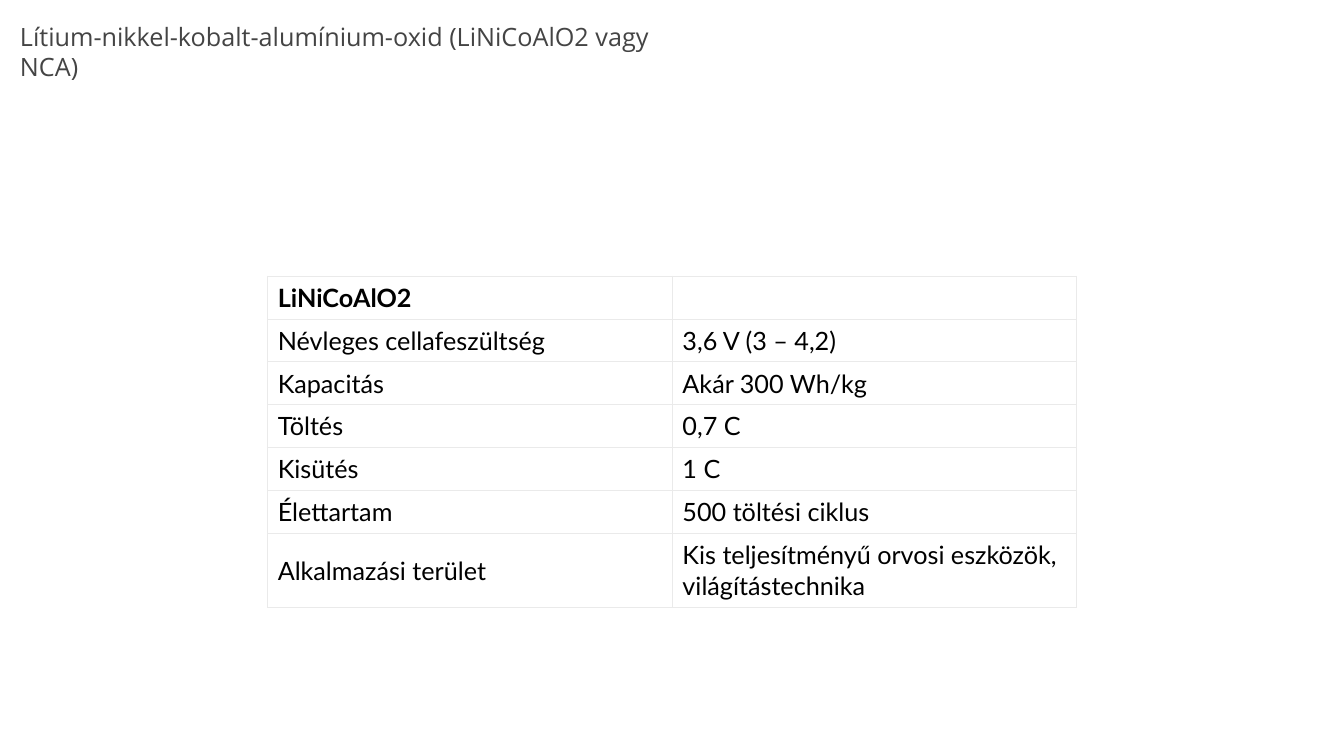
from dataclasses import dataclass

from lxml.etree import SubElement
from pptx import Presentation
from pptx.dml.color import RGBColor as Rgb
from pptx.enum.text import MSO_ANCHOR as Anchor, MSO_AUTO_SIZE as AutoSize, PP_ALIGN as Align
from pptx.oxml.ns import qn
from pptx.util import Cm, Pt

HEADING = "Lítium-nikkel-kobalt-alumínium-oxid (LiNiCoAlO2 vagy NCA)"
PROPERTIES = [
    ("LiNiCoAlO2", ""),
    ("Névleges cellafeszültség", "3,6 V (3 – 4,2)"),
    ("Kapacitás", "Akár 300 Wh/kg"),
    ("Töltés", "0,7 C"),
    ("Kisütés", "1 C"),
    ("Élettartam", "500 töltési ciklus"),
    ("Alkalmazási terület", "Kis teljesítményű orvosi eszközök, világítástechnika"),
]


@dataclass(frozen=True)
class Theme:
    heading_font: str = "Open Sans"
    table_font: str = "Lato"
    heading_color: str = "444444"
    table_color: str = "000000"
    cell_fill: str = "FFFFFF"
    border: str = "EAEAEA"
    text_size: float = 18
    border_width: float = 0.75


THEME = Theme()
COLUMN_WIDTH = Cm(10.2)
ROW_HEIGHT = Cm(1.08)
LAST_ROW_HEIGHT = Cm(1.86)


def format_font(font, name, color, bold=False):
    font.name = name
    font.size = Pt(THEME.text_size)
    font.bold = bold
    font.color.rgb = Rgb.from_string(color)


def add_borders(cell):
    """Draw all four sides; call before filling, as borders precede the fill in XML."""
    properties = cell._tc.get_or_add_tcPr()
    for side in ("a:lnL", "a:lnR", "a:lnT", "a:lnB"):
        line = SubElement(properties, qn(side), w=str(Pt(THEME.border_width)))
        fill = SubElement(line, qn("a:solidFill"))
        SubElement(fill, qn("a:srgbClr"), val=THEME.border)


def format_cell(cell, content, bold):
    add_borders(cell)
    cell.fill.solid()
    cell.fill.fore_color.rgb = Rgb.from_string(THEME.cell_fill)
    cell.vertical_anchor = Anchor.MIDDLE
    cell.margin_left = cell.margin_right = Cm(0.26)
    cell.margin_top = cell.margin_bottom = Cm(0.15)
    cell.text_frame.text = content
    for run in cell.text_frame.paragraphs[0].runs:
        format_font(run.font, THEME.table_font, THEME.table_color, bold)


def add_heading(slide):
    heading = slide.shapes.title
    heading.left, heading.top = Cm(0.25), Cm(0.41)
    heading.width, heading.height = Cm(16.94), Cm(1.8)
    frame = heading.text_frame
    frame.text = HEADING
    frame.word_wrap = True
    frame.auto_size = AutoSize.SHAPE_TO_FIT_TEXT
    frame.vertical_anchor = Anchor.TOP
    paragraph = frame.paragraphs[0]
    paragraph.alignment = Align.LEFT
    format_font(paragraph.runs[0].font, THEME.heading_font, THEME.heading_color)


def add_properties(slide):
    row_heights = [ROW_HEIGHT] * (len(PROPERTIES) - 1) + [LAST_ROW_HEIGHT]
    table = slide.shapes.add_table(
        len(PROPERTIES), 2, Cm(6.74), Cm(6.96), 2 * COLUMN_WIDTH, sum(row_heights)
    ).table
    table.first_row = table.horz_banding = False
    for column in table.columns:
        column.width = COLUMN_WIDTH
    for index, (row, height) in enumerate(zip(table.rows, row_heights)):
        row.height = height
        for cell, content in zip(row.cells, PROPERTIES[index]):
            format_cell(cell, content, bold=index == 0)


def main():
    deck = Presentation()
    deck.slide_width, deck.slide_height = Cm(33.87), Cm(19.05)
    slide = deck.slides.add_slide(deck.slide_layouts[5])
    add_heading(slide)
    add_properties(slide)
    deck.save("out.pptx")


if __name__ == "__main__":
    main()
